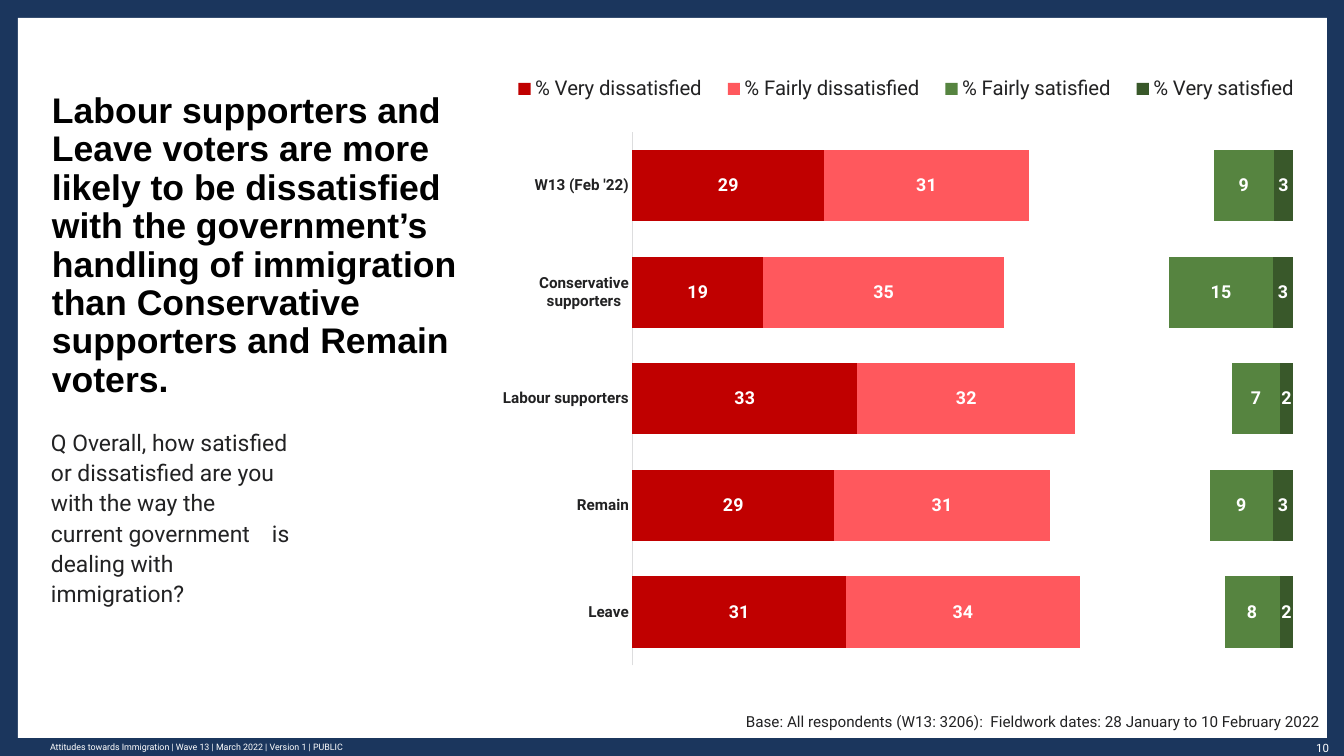
from lxml import etree
from pptx import Presentation
from pptx.chart.data import CategoryChartData
from pptx.dml.color import RGBColor
from pptx.enum.chart import XL_CHART_TYPE, XL_LEGEND_POSITION, XL_TICK_MARK
from pptx.enum.shapes import MSO_SHAPE
from pptx.enum.text import MSO_ANCHOR, MSO_AUTO_SIZE, PP_ALIGN
from pptx.oxml.ns import qn
from pptx.util import Pt

LEFT, RIGHT = PP_ALIGN.LEFT, PP_ALIGN.RIGHT
TOP, MIDDLE, BOTTOM = MSO_ANCHOR.TOP, MSO_ANCHOR.MIDDLE, MSO_ANCHOR.BOTTOM
NO_TICKS = XL_TICK_MARK.NONE
PX = 10000

COLORS = {
    "navy": "1B365D", "white": "FFFFFF", "black": "000000", "ink": "222223",
    "axis": "DDDDDE", "very_dissatisfied": "C00000", "fairly_dissatisfied": "FF585D",
    "fairly_satisfied": "568440", "very_satisfied": "39582A",
}
RGB = {name: RGBColor.from_string(value) for name, value in COLORS.items()}


def set_font(font, size, color, bold=False, face="Roboto"):
    for key, value in {"size": Pt(size), "bold": bold, "name": face}.items():
        setattr(font, key, value)
    font.color.rgb = RGB[color]


def set_layout(parent, index, fractions, inner=False):
    for old in parent.findall(qn("c:layout")):
        parent.remove(old)
    layout = etree.Element(qn("c:layout"))
    manual = etree.SubElement(layout, qn("c:manualLayout"))
    entries = [("layoutTarget", "inner")] if inner else []
    entries += [("xMode", "edge"), ("yMode", "edge")]
    entries += zip("xywh", fractions)
    for tag, value in entries:
        etree.SubElement(manual, qn("c:" + tag)).set("val", str(value))
    parent.insert(index, layout)


prs = Presentation()
prs.slide_width, prs.slide_height = 1344 * PX, 756 * PX
slide = prs.slides.add_slide(prs.slide_layouts[5])

# Navy frame around a white panel, which goes behind the title
slide.background.fill.solid()
slide.background.fill.fore_color.rgb = RGB["navy"]
panel = slide.shapes.add_shape(MSO_SHAPE.RECTANGLE, 18 * PX, 18 * PX, 1309 * PX, 720 * PX)
panel.shadow.inherit = False
panel.fill.solid()
panel.fill.fore_color.rgb = RGB["white"]
panel.line.fill.background()
slide.shapes.title._element.addprevious(panel._element)

# Title, question, base note and footer
headline = ("Labour supporters and Leave voters are more likely to be dissatisfied "
            "with the government’s handling of immigration than Conservative "
            "supporters and Remain voters.")
question = ("Q Overall, how satisfied or dissatisfied are you with the way the "
            "current government\tis dealing with immigration?")
base = "Base: All respondents (W13: 3206):  Fieldwork dates: 28 January to 10 February 2022"
footer = "Attitudes towards Immigration | Wave 13 | March 2022 | Version 1 | PUBLIC"
texts = [
    (headline, (52, 90, 440, 310), BOTTOM, LEFT, 0.9, (28, "black", True, "Arial")),
    (question, (51, 426, 241, 183), TOP, LEFT, 1.1, (18, "ink")),
    (base, (38, 712, 1282, 19), TOP, RIGHT, 1.0, (12, "ink")),
    (footer, (50, 738, 489, 18), MIDDLE, LEFT, 1.0, (7, "white")),
    ("10", (1286, 740, 43, 16), TOP, RIGHT, 1.1, (9, "white")),
]
for text, place, anchor, alignment, spacing, style in texts:
    if text == headline:
        box = slide.shapes.title
    else:
        box = slide.shapes.add_textbox(0, 0, PX, PX)
    box.left, box.top, box.width, box.height = [length * PX for length in place]
    frame = box.text_frame
    frame_format = {
        "margin_left": 0, "margin_top": 0, "margin_right": 0, "margin_bottom": 0,
        "word_wrap": True, "auto_size": MSO_AUTO_SIZE.NONE, "vertical_anchor": anchor,
    }
    for key, value in frame_format.items():
        setattr(frame, key, value)
    frame.text = text
    paragraph = frame.paragraphs[0]
    paragraph.alignment, paragraph.line_spacing = alignment, spacing
    if "\t" in text:
        tabs = etree.SubElement(paragraph._p.get_or_add_pPr(), qn("a:tabLst"))
        etree.SubElement(tabs, qn("a:tab"), pos=str(221 * PX), algn="l")
    set_font(paragraph.runs[0].font, *style)

# Satisfaction chart; the unfilled series is the gap between the two sides
answers = [
    ("% Very dissatisfied", (29, 19, 33, 29, 31), "very_dissatisfied"),
    ("% Fairly dissatisfied", (31, 35, 32, 31, 34), "fairly_dissatisfied"),
    ("Series 3", (28, 24, 23, 23, 21), None),
    ("% Fairly satisfied", (9, 15, 7, 9, 8), "fairly_satisfied"),
    ("% Very satisfied", (3, 3, 2, 3, 2), "very_satisfied"),
]
data = CategoryChartData()
data.categories = ["W13 (Feb '22)", "Conservative supporters", "Labour supporters",
                   "Remain", "Leave"]
for name, values, _ in answers:
    data.add_series(name, values)
chart = slide.shapes.add_chart(XL_CHART_TYPE.BAR_STACKED_100, 499 * PX, 54 * PX,
                               814 * PX, 635 * PX, data).chart
chart.has_title = False
set_font(chart.font, 10, "ink")
plot = chart.plots[0]
plot.gap_width, plot.overlap, plot.vary_by_categories = 50, 100, False
set_layout(chart._chartSpace.chart.plotArea, 0, (0.164, 0.123, 0.812, 0.84), inner=True)

for series, (_, _, color) in zip(plot.series, answers):
    if color is None:
        series.format.fill.background()
        continue
    series.format.fill.solid()
    series.format.fill.fore_color.rgb = RGB[color]
    series.data_labels.show_value = True
    set_font(series.data_labels.font, 14, "white", True)

# Axes
groups = chart.category_axis
groups.reverse_order = True
groups.major_tick_mark = groups.minor_tick_mark = NO_TICKS
groups.format.line.color.rgb = RGB["axis"]
groups.format.line.width = Pt(0.75)
set_font(groups.tick_labels.font, 12, "ink", True)
shares = chart.value_axis
shares.has_major_gridlines = False
shares.major_unit = 0.2
shares.visible = False

# Legend above the bars, without the gap series
chart.has_legend = True
legend = chart.legend
legend.position = XL_LEGEND_POSITION.BOTTOM
legend.include_in_layout = False
set_font(legend.font, 16, "ink")
hidden = etree.Element(qn("c:legendEntry"))
etree.SubElement(hidden, qn("c:idx")).set("val", "2")
etree.SubElement(hidden, qn("c:delete")).set("val", "1")
legend._element.insert(1, hidden)
set_layout(legend._element, 2, (0, 0.02, 1, 0.07))

prs.save("out.pptx")
